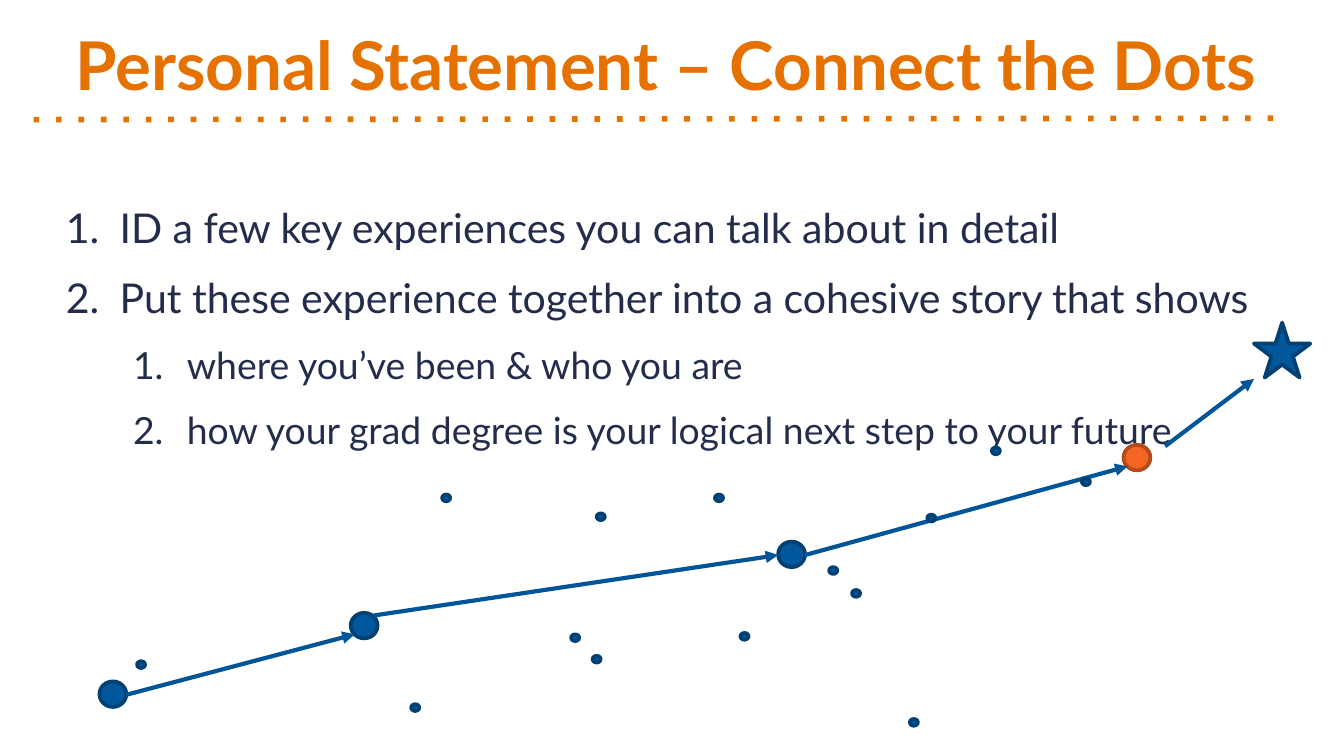
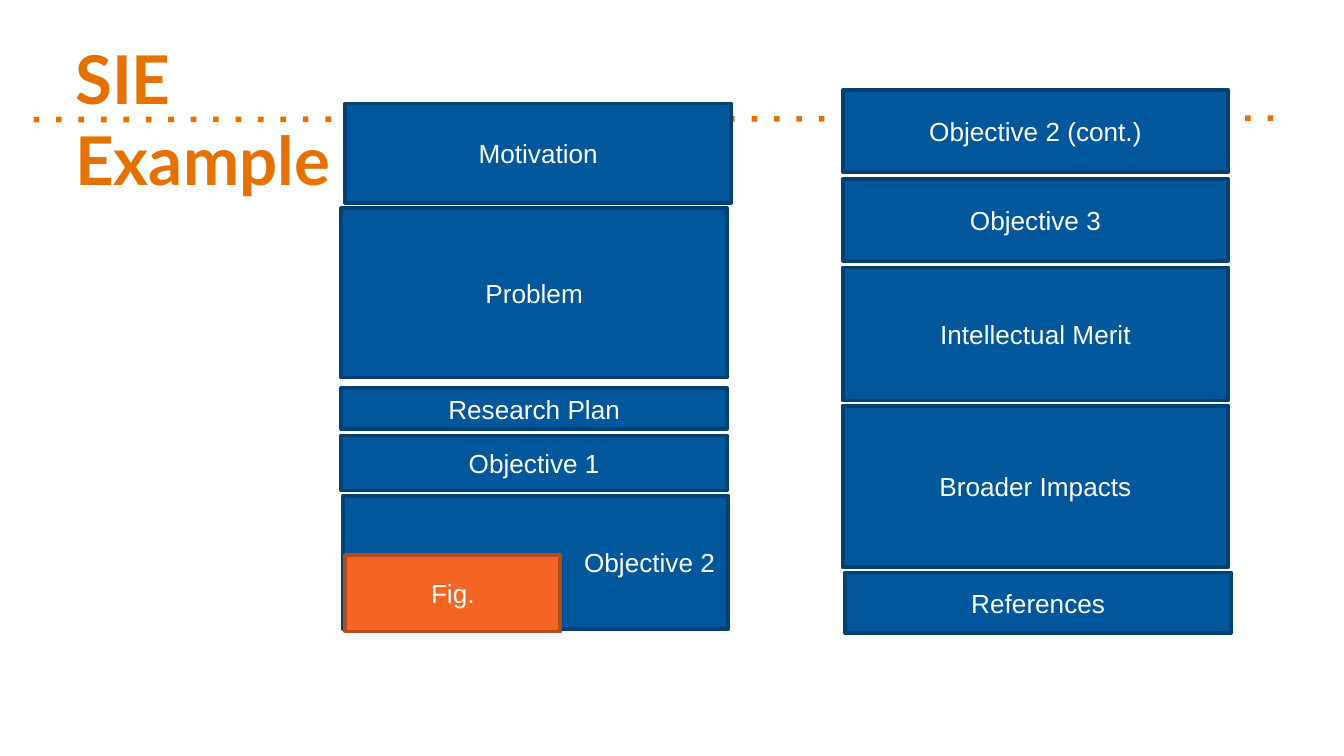
from lxml import etree
from pptx import Presentation
from pptx import util as u
from pptx.dml.color import RGBColor
from pptx.enum import shapes, text
from pptx.oxml.ns import qn

COLORS = {
    "title": "E57200",
    "body": "232D4B",
    "blue": "01579B",
    "blue edge": "014073",
    "orange": "F46524",
    "orange edge": "B54B1B",
    "arrow": "005599",
    "white": "FFFFFF",
}
RGB = {name: RGBColor.from_string(value) for name, value in COLORS.items()}


def add_figure(slide, kind, left, top, width, height, color="blue"):
    """Add a filled preset shape outlined in the darker edge of its colour."""
    shape = slide.shapes.add_shape(
        kind, u.Inches(left), u.Inches(top), u.Inches(width), u.Inches(height))
    shape.shadow.inherit = False
    shape.fill.solid()
    shape.fill.fore_color.rgb = RGB[color]
    shape.line.color.rgb = RGB[color + " edge"]
    shape.line.width = u.Pt(2)
    return shape


def add_line(slide, start, end, color, width, detail, value):
    """Add a straight line; detail and value name its dash or arrowhead."""
    line = slide.shapes.add_connector(
        shapes.MSO_CONNECTOR.STRAIGHT, *[u.Inches(n) for n in start + end])
    line.line.color.rgb = RGB[color]
    line.line.width = u.Pt(width)
    outline = line.element.spPr.find(qn("a:ln"))
    attribute = "val" if detail == "a:prstDash" else "type"
    etree.SubElement(outline, qn(detail)).set(attribute, value)
    etree.SubElement(line.element.spPr, qn("a:effectLst"))
    return line


presentation = Presentation()
presentation.slide_width = u.Inches(10)
presentation.slide_height = u.Inches(10 * 9 / 16)
title_and_body, title_only = presentation.slide_layouts[1], presentation.slide_layouts[5]
dots_slide = presentation.slides.add_slide(title_and_body)
example_slide = presentation.slides.add_slide(title_only)

# Dotted rule on the master, shared by both slides
rule = add_line(dots_slide, (0.25, 0.89), (9.55, 0.88), "title", 3, "a:prstDash", "dot")
rule.element.nvCxnSpPr.cNvPr.set("id", "20")
presentation.slide_master.placeholders[0].element.addprevious(rule.element)

# Titles
titles = [
    (dots_slide, ["Personal Statement – Connect the Dots"], text.MSO_ANCHOR.BOTTOM),
    (example_slide, ["SIE ", "Example"], text.MSO_ANCHOR.TOP),
]
for slide, lines, anchor in titles:
    title = slide.shapes.title
    title.left, title.top = u.Inches(0.46), u.Inches(0.18)
    title.width, title.height = u.Inches(9.09), u.Inches(0.69)
    frame = title.text_frame
    frame.auto_size = text.MSO_AUTO_SIZE.NONE
    frame.vertical_anchor = anchor
    frame.margin_left = frame.margin_right = u.Inches(0.1)
    frame.margin_top = frame.margin_bottom = u.Inches(0.1)
    paragraph = frame.paragraphs[0]
    paragraph.alignment = text.PP_ALIGN.LEFT
    for index, words in enumerate(lines):
        if index:
            paragraph.add_line_break()
        run = paragraph.add_run()
        run.text = words
        run.font.name = "Lato"
        run.font.size = u.Pt(36)
        run.font.bold = True
        run.font.color.rgb = RGB["title"]

# Slide 1: numbered list
steps = [
    (0, "ID a few key experiences you can talk about in detail"),
    (0, "Put these experience together into a cohesive story that shows"),
    (1, "where you’ve been & who you are"),
    (1, "how your grad degree is your logical next step to your future"),
]
body = dots_slide.placeholders[1]
body.left, body.top = u.Inches(0.29), u.Inches(1.07)
body.width, body.height = u.Inches(9.71), u.Inches(3.06)
frame = body.text_frame
frame.auto_size = text.MSO_AUTO_SIZE.NONE
frame.vertical_anchor = text.MSO_ANCHOR.MIDDLE
frame.margin_left = frame.margin_right = frame.margin_top = u.Inches(0.1)
frame.margin_bottom = u.Inches(0.43)
for index, (level, words) in enumerate(steps):
    paragraph = frame.add_paragraph() if index else frame.paragraphs[0]
    paragraph.level = level
    paragraph.space_before = u.Pt(11)
    run = paragraph.add_run()
    run.text = words
    run.font.name = "Lato"
    run.font.size = u.Pt(22 - 2 * level)
    run.font.color.rgb = RGB["body"]
    properties = paragraph._p.get_or_add_pPr()
    properties.set("marL", str(u.Inches(0.5 + 0.5 * level)))
    properties.set("indent", str(u.Inches(-0.4)))
    bullet_color = etree.SubElement(properties, qn("a:buClr"))
    etree.SubElement(bullet_color, qn("a:srgbClr")).set("val", COLORS["body"])
    etree.SubElement(properties, qn("a:buFont")).set("typeface", "Lato")
    etree.SubElement(properties, qn("a:buAutoNum")).set("type", "arabicPeriod")

# Slide 1: milestones, the path between them and the unused dots
OVAL = shapes.MSO_SHAPE.OVAL
milestones = [
    (0.74, 5.07, "blue"), (2.61, 4.56, "blue"), (5.79, 4.03, "blue"), (8.36, 3.31, "orange"),
]
for left, top, color in milestones:
    add_figure(dots_slide, OVAL, left, top, 0.2, 0.19, color)
add_figure(dots_slide, shapes.MSO_SHAPE.STAR_5_POINT, 9.33, 2.4, 0.42, 0.41)

path_steps = [
    ((0.94, 5.17), (2.64, 4.72)),
    ((2.78, 4.58), (5.79, 4.13)),
    ((5.99, 4.13), (8.39, 3.47)),
    ((8.67, 3.32), (9.33, 2.82)),
]
for start, end in path_steps:
    add_line(dots_slide, start, end, "arrow", 2.25, "a:tailEnd", "triangle")

small_dots = [
    (4.25, 4.72), (4.41, 4.88), (4.44, 3.82), (5.51, 4.71), (3.06, 5.24),
    (3.29, 3.68), (5.32, 3.68), (6.77, 5.35), (6.17, 4.22), (6.34, 4.39),
    (6.9, 3.83), (8.05, 3.56), (7.38, 3.33), (1.02, 4.92),
]
for left, top in small_dots:
    add_figure(dots_slide, OVAL, left, top, 0.06, 0.05)

# Slide 2: two page columns of sections, with a figure inside Objective 2
SECTION_WIDTH = 2.87
CENTER, RIGHT = text.PP_ALIGN.CENTER, text.PP_ALIGN.RIGHT
sections = [
    ("Motivation", 2.57, 0.77, SECTION_WIDTH, 0.74, "blue", CENTER),
    ("Problem", 2.54, 1.55, SECTION_WIDTH, 1.26, "blue", CENTER),
    ("Research Plan", 2.54, 2.89, SECTION_WIDTH, 0.3, "blue", CENTER),
    ("Objective 1", 2.54, 3.24, SECTION_WIDTH, 0.41, "blue", CENTER),
    ("Objective 2", 2.55, 3.69, SECTION_WIDTH, 0.99, "blue", RIGHT),
    ("Fig.", 2.57, 4.13, 1.6, 0.57, "orange", CENTER),
    ("Objective 2 (cont.)", 6.27, 0.67, SECTION_WIDTH, 0.61, "blue", CENTER),
    ("Objective 3", 6.27, 1.33, SECTION_WIDTH, 0.61, "blue", CENTER),
    ("Intellectual Merit", 6.27, 1.99, SECTION_WIDTH, 0.99, "blue", CENTER),
    ("Broader Impacts", 6.27, 3.02, SECTION_WIDTH, 1.2, "blue", CENTER),
    ("References", 6.29, 4.26, SECTION_WIDTH, 0.45, "blue", CENTER),
]
for label, left, top, width, height, color, alignment in sections:
    section = add_figure(
        example_slide, shapes.MSO_SHAPE.RECTANGLE, left, top, width, height, color)
    section.text_frame.vertical_anchor = text.MSO_ANCHOR.MIDDLE
    paragraph = section.text_frame.paragraphs[0]
    paragraph.alignment = alignment
    run = paragraph.add_run()
    run.text = label
    run.font.name = "Arial"
    run.font.size = u.Pt(14)
    run.font.color.rgb = RGB["white"]

presentation.save("out.pptx")
